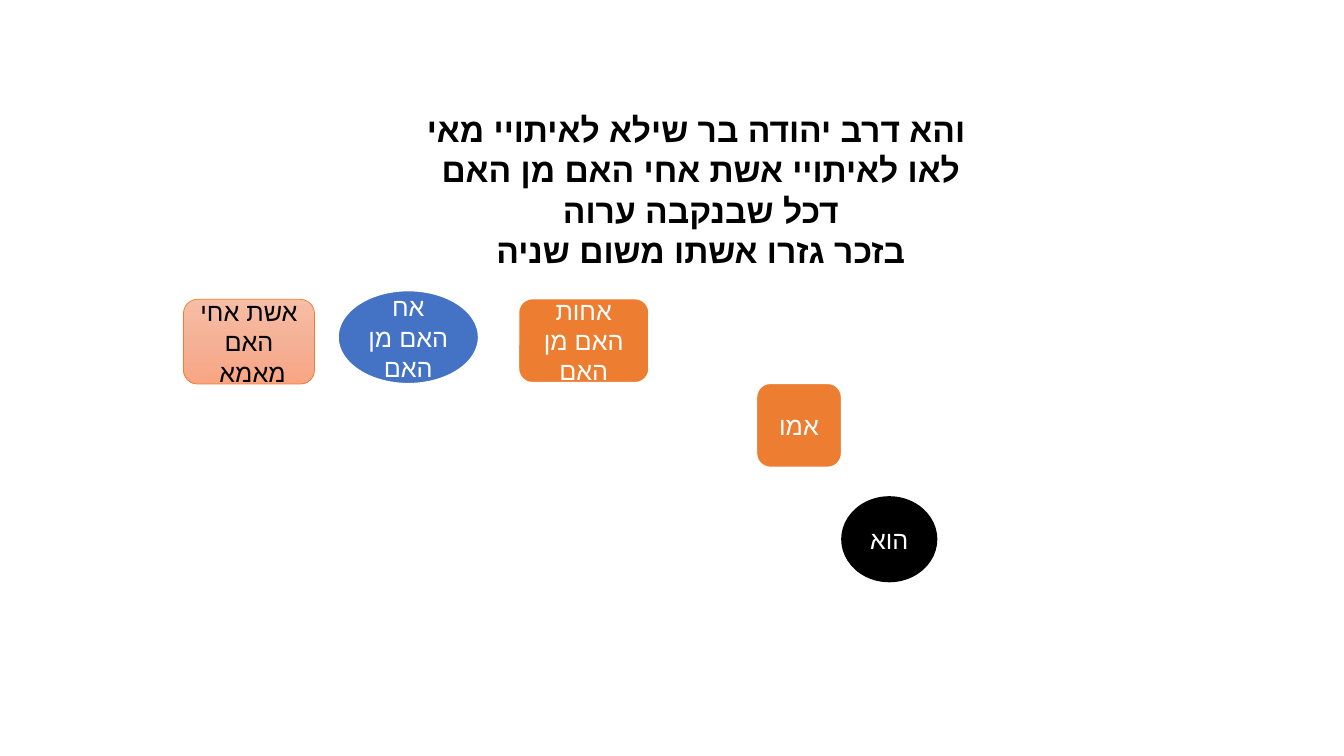
import copy

import pptx
import pptx.dml.color
import pptx.enum.shapes
import pptx.enum.text
import pptx.oxml.ns
import pptx.util
from pptx.util import Inches

FONT = "Arial"
COLORS = {
    "black": "000000",
    "white": "FFFFFF",
    "orange": "ED7D31",
    "blue": "4472C4",
}
PEACH_STOPS = ["F7BDA5", "F5B196", "F8A582"]
HEADING = [
    "והא דרב יהודה בר שילא לאיתויי מאי לאו לאיתויי אשת אחי האם מן האם ",
    "דכל שבנקבה ערוה ",
    "בזכר גזרו אשתו משום שניה ",
]
MAN = pptx.enum.shapes.MSO_SHAPE.OVAL
WOMAN = pptx.enum.shapes.MSO_SHAPE.ROUNDED_RECTANGLE


def rgb(value):
    return pptx.dml.color.RGBColor.from_string(value)


def write_hebrew(frame, lines, size, color, bold=False):
    frame.word_wrap = True
    frame.text = "\n".join(lines)
    for paragraph in frame.paragraphs:
        paragraph.alignment = pptx.enum.text.PP_ALIGN.CENTER
        paragraph.line_spacing = 1.0
        paragraph._p.get_or_add_pPr().set("rtl", "1")
        for run in paragraph.runs:
            run.font.name = FONT
            run.font.size = pptx.util.Pt(size)
            run.font.bold = bold
            run.font.color.rgb = rgb(color)
            script_font = run._r.get_or_add_rPr().makeelement(
                pptx.oxml.ns.qn("a:cs"), {"typeface": FONT})
            run._r.rPr.append(script_font)


def add_heading(slide):
    heading = slide.shapes.title
    heading.left, heading.top = Inches(3.83), Inches(1.03)
    heading.width, heading.height = Inches(6.15), Inches(1.72)
    frame = heading.text_frame
    frame.auto_size = pptx.enum.text.MSO_AUTO_SIZE.NONE
    frame.vertical_anchor = pptx.enum.text.MSO_ANCHOR.TOP
    write_hebrew(frame, HEADING, 24, COLORS["black"], bold=True)


def fill_gradient(shape, colors):
    shape.fill.gradient()
    shape.fill.gradient_angle = 270
    stop_list = shape._element.spPr.find(".//" + pptx.oxml.ns.qn("a:gsLst"))
    middle = copy.deepcopy(stop_list[0])
    middle.set("pos", "50000")
    stop_list.insert(1, middle)
    for stop, color in zip(shape.fill.gradient_stops, colors):
        stop.color.rgb = rgb(color)


def add_relative(slide, kind, place, label, fill, line="white",
                 line_width=1.5, text="white"):
    relative = slide.shapes.add_shape(kind, *map(Inches, place))
    relative.shadow.inherit = False
    if isinstance(fill, list):
        fill_gradient(relative, fill)
    else:
        relative.fill.solid()
        relative.fill.fore_color.rgb = rgb(COLORS[fill])
    relative.line.color.rgb = rgb(COLORS[line])
    relative.line.width = pptx.util.Pt(line_width)
    relative.text_frame.vertical_anchor = pptx.enum.text.MSO_ANCHOR.MIDDLE
    write_hebrew(relative.text_frame, [label], 18, COLORS[text])


def main():
    deck = pptx.Presentation()
    deck.slide_width, deck.slide_height = Inches(13.33), Inches(7.5)
    slide = deck.slides.add_slide(deck.slide_layouts[5])
    add_heading(slide)
    add_relative(slide, MAN, (8.35, 4.93, 0.94, 0.84), "הוא", "black",
                 line="black", line_width=1)
    add_relative(slide, WOMAN, (7.5, 3.8, 0.85, 0.84), "אמו", "orange")
    add_relative(slide, WOMAN, (5.14, 2.96, 1.3, 0.84), "אחות האם מן האם",
                 "orange")
    add_relative(slide, WOMAN, (1.82, 2.97, 1.3, 0.84), "אשת אחי האם מאמא ",
                 PEACH_STOPS, line="orange", line_width=0.5, text="black")
    add_relative(slide, MAN, (3.35, 2.88, 1.4, 0.93), "אח האם מן האם", "blue")
    deck.save("out.pptx")


if __name__ == "__main__":
    main()
